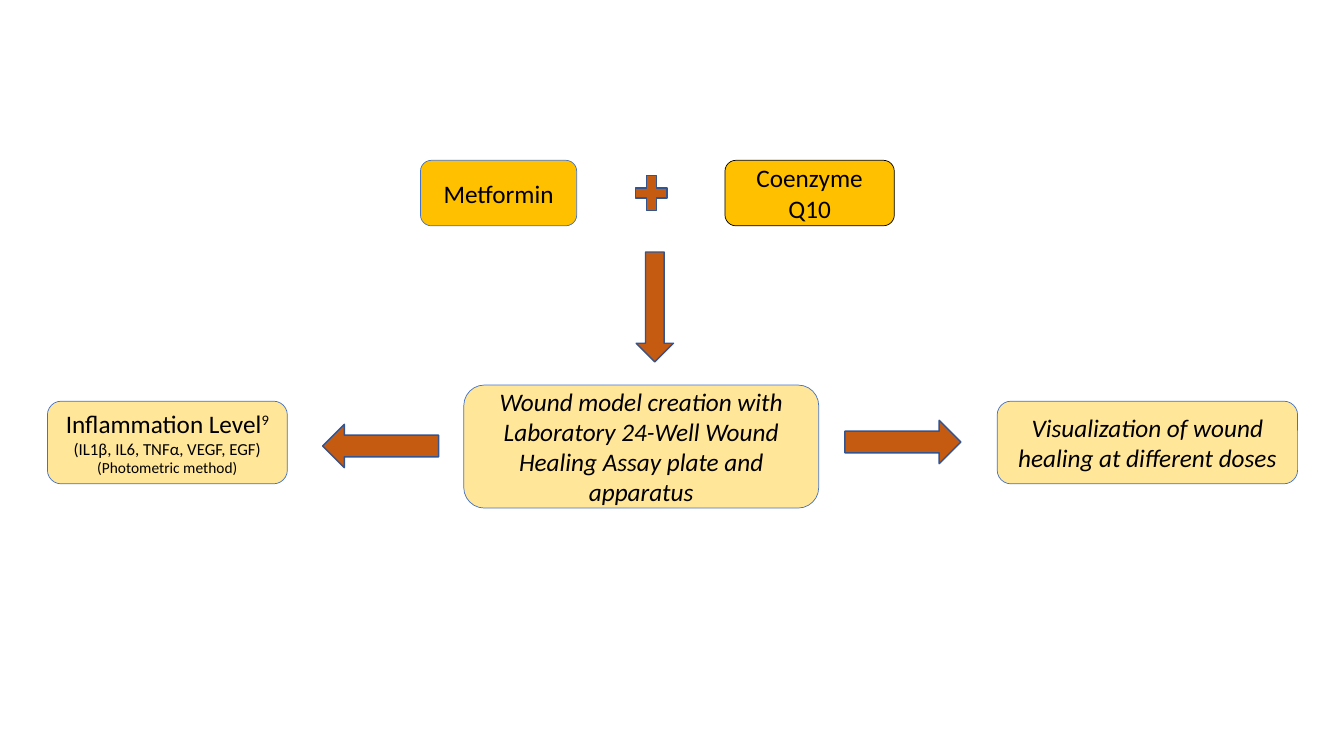
from pptx import Presentation
from pptx.dml.color import RGBColor as RGB
from pptx.enum.shapes import MSO_SHAPE as Kind
from pptx.enum.text import MSO_ANCHOR as Anchor, PP_ALIGN as Align
from pptx.util import Inches, Pt

HUES = {"gold": "FFC000", "cream": "FFE699", "rust": "C55A11",
        "blue": "4472C4", "navy": "325491", "black": "000000"}


class Flow:
    def __init__(self, slide, font="Calibri"):
        self.slide = slide
        self.font = font

    def shape(self, kind, at, fill, line, width):
        item = self.slide.shapes.add_shape(kind, *map(Inches, at))
        item.shadow.inherit = False
        item.fill.solid()
        item.fill.fore_color.rgb = RGB.from_string(HUES[fill])
        item.line.color.rgb = RGB.from_string(HUES[line])
        item.line.width = Pt(width)
        return item

    def sign(self, kind, at):
        """Draw a plus or a block arrow."""
        self.shape(kind, at, "rust", "navy", 1)

    def box(self, at, fill, paras, line="blue", italic=False):
        """Draw a rounded box; each paragraph lists (text, size, baseline) runs."""
        frame = self.shape(Kind.ROUNDED_RECTANGLE, at, fill, line, 0.5).text_frame
        frame.word_wrap = True
        frame.vertical_anchor = Anchor.MIDDLE
        for i, runs in enumerate(paras):
            para = frame.add_paragraph() if i else frame.paragraphs[0]
            para.alignment = Align.CENTER
            for text, size, base in runs:
                run = para.add_run()
                run.text = text
                run.font.name = self.font
                run.font.size = Pt(size)
                run.font.italic = italic
                run.font.color.rgb = RGB.from_string(HUES["black"])
                if base:
                    run._r.get_or_add_rPr().set("baseline", str(base * 1000))


def main():
    deck = Presentation()
    deck.slide_width, deck.slide_height = Inches(13.33), Inches(7.5)
    flow = Flow(deck.slides.add_slide(deck.slide_layouts[6]))

    # Compounds
    flow.box((4.17, 1.59, 1.55, 0.65), "gold", [[("Metformin", 18, 0)]])
    flow.sign(Kind.MATH_PLUS, (6.25, 1.68, 0.42, 0.47))
    flow.box((7.19, 1.59, 1.68, 0.65), "gold", [[("Coenzyme Q10", 18, 0)]], line="black")

    # Wound model
    flow.sign(Kind.DOWN_ARROW, (6.31, 2.5, 0.37, 1.09))
    model = "Wound model creation with Laboratory 24-Well Wound Healing Assay plate and apparatus"
    flow.box((4.6, 3.82, 3.52, 1.22), "cream", [[(model, 18, 0)]], italic=True)

    # Readouts
    flow.sign(Kind.LEFT_ARROW, (3.2, 4.21, 1.15, 0.43))
    flow.box((0.47, 3.98, 2.38, 0.82), "cream", [
        [("Inflammation Level", 18, 0), ("9 ", 18, 30), ("(IL1β, IL6, TNFα, VEGF, EGF)", 12, 0)],
        [("(Photometric method)", 11, 0)]])
    flow.sign(Kind.RIGHT_ARROW, (8.38, 4.17, 1.15, 0.43))
    flow.box((9.89, 3.98, 2.98, 0.82), "cream",
             [[("Visualization of wound healing at different doses", 18, 0)]], italic=True)

    deck.save("out.pptx")


if __name__ == "__main__":
    main()
